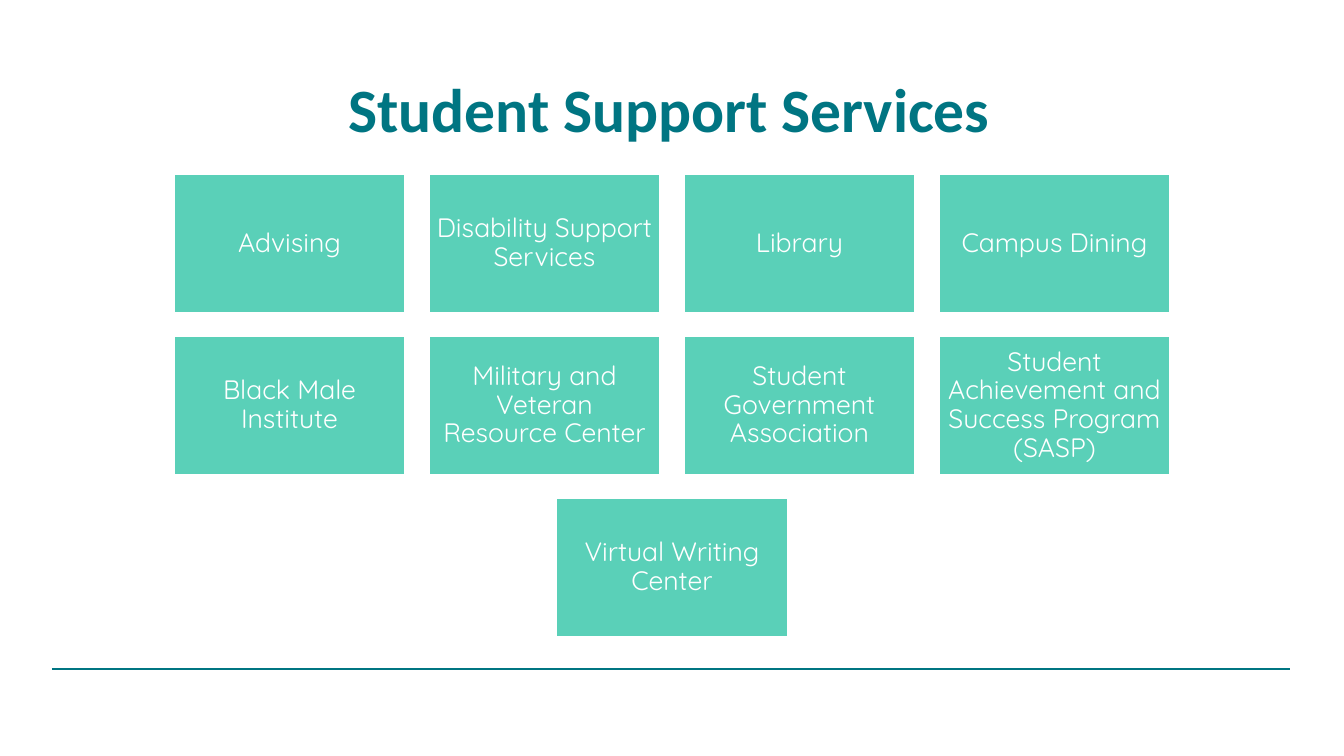
import pptx
import pptx.util
import pptx.dml.color
import pptx.enum.shapes
import pptx.enum.text
import pptx.oxml.ns
import lxml.etree
from dataclasses import dataclass

# Content
TITLE = "Student Support Services"
SERVICE_ROWS = [
    ["Advising", "Disability Support Services", "Library", "Campus Dining"],
    ["Black Male Institute", "Military and Veteran Resource Center",
     "Student Government Association",
     "Student Achievement and Success Program (SASP)"],
    ["Virtual Writing Center"],
]

# Geometry in px
PX_PER_INCH = 100.8
SLIDE_WIDTH, SLIDE_HEIGHT = 1344, 756
TITLE_BOX = (52, 66, 1235, 90)
CARD_WIDTH, CARD_HEIGHT, CARD_GAP = 232, 139, 23
GRID_CENTER, GRID_TOP = 672, 174
CARD_INSET = 8
RULE_LEFT, RULE_RIGHT, RULE_Y = 52, 1290, 669


@dataclass(frozen=True)
class Theme:
    teal: str = "007582"
    mint: str = "5AD0B8"
    white: str = "FFFFFF"
    title_font: str = "Calibri"
    card_font: str = "Quicksand"
    title_size: int = 44
    card_size: int = 19


THEME = Theme()


def px(length):
    return pptx.util.Emu(round(length * 914400 / PX_PER_INCH))


def rgb(value):
    return pptx.dml.color.RGBColor.from_string(value)


def write(frame, text, font, size, color, bold=False):
    paragraph = frame.paragraphs[0]
    paragraph.alignment = pptx.enum.text.PP_ALIGN.CENTER
    run = paragraph.add_run()
    run.text = text
    run.font.name = font
    run.font.size = pptx.util.Pt(size)
    run.font.color.rgb = rgb(color)
    run.font.bold = bold
    return paragraph


def add_rule(slide):
    rule = slide.shapes.add_connector(
        pptx.enum.shapes.MSO_CONNECTOR.STRAIGHT,
        px(RULE_LEFT), px(RULE_Y), px(RULE_RIGHT), px(RULE_Y))
    rule.line.color.rgb = rgb(THEME.teal)
    rule.line.width = pptx.util.Pt(1)
    lxml.etree.SubElement(rule._element.spPr, pptx.oxml.ns.qn("a:effectLst"))


def add_title(slide):
    title = slide.shapes.title
    title.left, title.top, title.width, title.height = map(px, TITLE_BOX)
    frame = title.text_frame
    frame.auto_size = pptx.enum.text.MSO_AUTO_SIZE.NONE
    frame.vertical_anchor = pptx.enum.text.MSO_ANCHOR.TOP
    write(frame, TITLE, THEME.title_font, THEME.title_size, THEME.teal, bold=True)


def add_card(slide, service, left, top):
    card = slide.shapes.add_shape(
        pptx.enum.shapes.MSO_SHAPE.RECTANGLE,
        px(left), px(top), px(CARD_WIDTH), px(CARD_HEIGHT))
    card.shadow.inherit = False
    card.fill.solid()
    card.fill.fore_color.rgb = rgb(THEME.mint)
    card.line.color.rgb = rgb(THEME.white)
    card.line.width = pptx.util.Pt(1.5)
    frame = card.text_frame
    frame.word_wrap = True
    frame.vertical_anchor = pptx.enum.text.MSO_ANCHOR.MIDDLE
    frame.margin_left = frame.margin_right = px(CARD_INSET)
    frame.margin_top = frame.margin_bottom = px(CARD_INSET)
    label = write(frame, service, THEME.card_font, THEME.card_size, THEME.white)
    label.line_spacing = 0.9


def main():
    deck = pptx.Presentation()
    deck.slide_width, deck.slide_height = px(SLIDE_WIDTH), px(SLIDE_HEIGHT)
    slide = deck.slides.add_slide(deck.slide_layouts[5])

    add_rule(slide)
    add_title(slide)

    # Service cards, each row centred
    for row, services in enumerate(SERVICE_ROWS):
        row_width = len(services) * (CARD_WIDTH + CARD_GAP) - CARD_GAP
        row_left = GRID_CENTER - row_width / 2
        top = GRID_TOP + row * (CARD_HEIGHT + CARD_GAP)
        for column, service in enumerate(services):
            add_card(slide, service, row_left + column * (CARD_WIDTH + CARD_GAP), top)

    deck.save("out.pptx")


if __name__ == "__main__":
    main()
